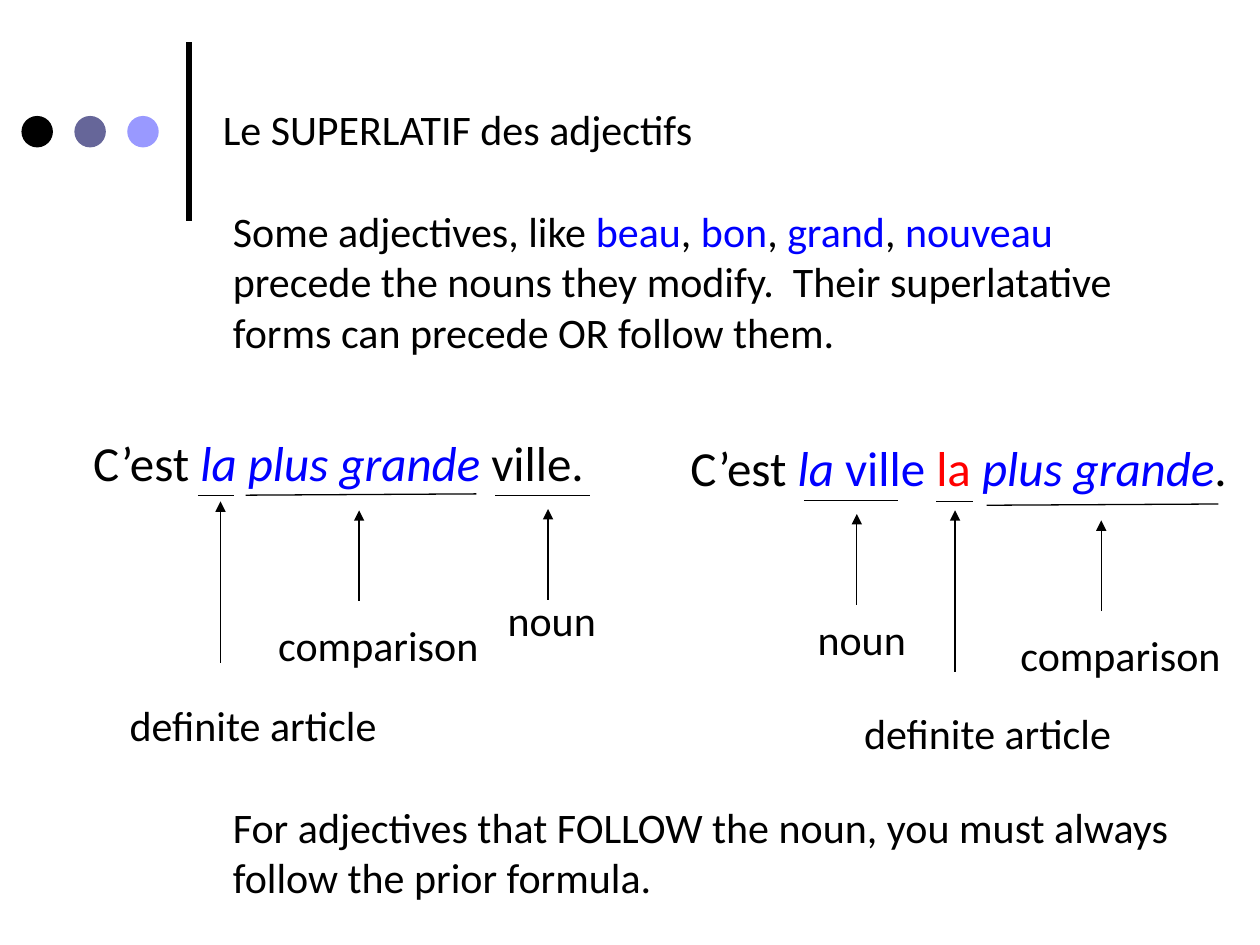
from pptx import Presentation
from pptx import util as u
from pptx.dml.color import RGBColor
from pptx.enum import shapes, text
from pptx.oxml.ns import qn
from lxml import etree

INK = {"black": "000000", "slate": "666699", "lilac": "9999FF",
       "blue": "0000FF", "red": "FF0000"}
BLUE = {"ink": "blue"}
ITAL = {"ink": "blue", "italic": True}
RED = {"ink": "red"}


def rgb(ink):
    return RGBColor.from_string(INK[ink])


class Deck:
    """Holds the text style and the slide being drawn."""

    def __init__(self, wide, high):
        self.prs = Presentation()
        self.prs.slide_width = u.Inches(wide)
        self.prs.slide_height = u.Inches(high)
        self.slide = self.prs.slides.add_slide(self.prs.slide_layouts[6])
        self.font = {"name": "Calibri", "size": u.Pt(24), "italic": False}

    def words(self, x, y, w, h, *runs, size=24):
        """Write runs, each a string or a (string, format) pair."""
        box = self.slide.shapes.add_textbox(*map(u.Inches, (x, y, w, h)))
        frame = box.text_frame
        frame.word_wrap = True
        frame.auto_size = text.MSO_AUTO_SIZE.SHAPE_TO_FIT_TEXT
        for item in runs:
            part, look = (item, {}) if isinstance(item, str) else item
            run = frame.paragraphs[0].add_run()
            run.text = part
            form = {**self.font, "size": u.Pt(size), **look}
            run.font.color.rgb = rgb(form.pop("ink", "black"))
            for key, val in form.items():
                setattr(run.font, key, val)

    def dot(self, x, y, size, ink):
        dot = self.slide.shapes.add_shape(
            shapes.MSO_SHAPE.OVAL, *map(u.Inches, (x, y, size, size)))
        dot.shadow.inherit = False
        dot.fill.solid()
        dot.fill.fore_color.rgb = rgb(ink)
        dot.line.fill.background()

    def line(self, x1, y1, x2, y2, width=0.75, arrow=False):
        line = self.slide.shapes.add_connector(
            shapes.MSO_CONNECTOR.STRAIGHT, *map(u.Inches, (x1, y1, x2, y2)))
        line.line.color.rgb = rgb("black")
        line.line.width = u.Pt(width)
        if arrow:
            etree.SubElement(line.line._ln, qn("a:tailEnd"), type="triangle")
        etree.SubElement(line._element.spPr, qn("a:effectLst"))

    def save(self):
        self.prs.save("out.pptx")


def main():
    deck = Deck(10, 7.5)

    # Title and its ornament
    deck.line(1.5, 1.75, 1.5, 0.33, width=3)
    for i, ink in enumerate(("black", "slate", "lilac")):
        deck.dot(0.17 + 0.42 * i, 0.92, 0.25, ink)
    deck.words(1.67, 0.77, 8.33, 0.5, "Le SUPERLATIF des adjectifs")

    # Rules
    deck.words(1.75, 1.58, 7.75, 1.31, "Some adjectives, like ",
               ("beau", BLUE), ", ", ("bon", BLUE), ", ", ("grand", BLUE),
               ",", (" nouveau ", BLUE),
               "precede the nouns they modify.  Their superlatative "
               "forms can precede OR follow them.")
    deck.words(1.75, 6.31, 7.75, 0.91,
               "For adjectives that FOLLOW the noun, you must always "
               "follow the prior formula.")

    # Example sentences
    deck.words(0.64, 3.38, 4.41, 0.57, "C’est ", ("la plus grande ", ITAL),
               "ville.", size=28)
    deck.words(5.38, 3.42, 4.61, 0.57, "C’est ", ("la ", ITAL),
               ("ville ", BLUE), ("la ", RED), ("plus grande", ITAL), ".",
               size=28)

    # Each part: label, label x, y and width; arrow x, top and length;
    # underline x, y, width and rise
    parts = [
        ("definite article", 0.93, 5.5, 2.48, 1.75, 3.98, 1.28,
         1.57, 3.93, 0.29, 0),
        ("comparison", 2.11, 4.87, 2.48, 2.85, 4.05, 0.72,
         1.95, 3.93, 1.83, 0.01),
        ("noun", 3.93, 4.67, 1.11, 4.35, 4.04, 0.72,
         3.93, 3.93, 0.75, 0),
        ("noun", 6.39, 4.82, 1.11, 6.8, 4.08, 0.72,
         6.38, 3.97, 0.75, 0),
        ("definite article", 6.76, 5.57, 2.48, 7.58, 4.05, 1.28,
         7.43, 3.98, 0.29, 0),
        ("comparison", 8, 4.95, 2.48, 8.74, 4.13, 0.72,
         7.83, 4.01, 1.84, 0.01),
    ]
    for name, x, y, w, tip, top, drop, left, base, span, rise in parts:
        deck.words(x, y, w, 0.5, name)
        deck.line(tip, top + drop, tip, top, arrow=True)
        deck.line(left, base, left + span, base - rise)

    deck.save()


if __name__ == "__main__":
    main()
